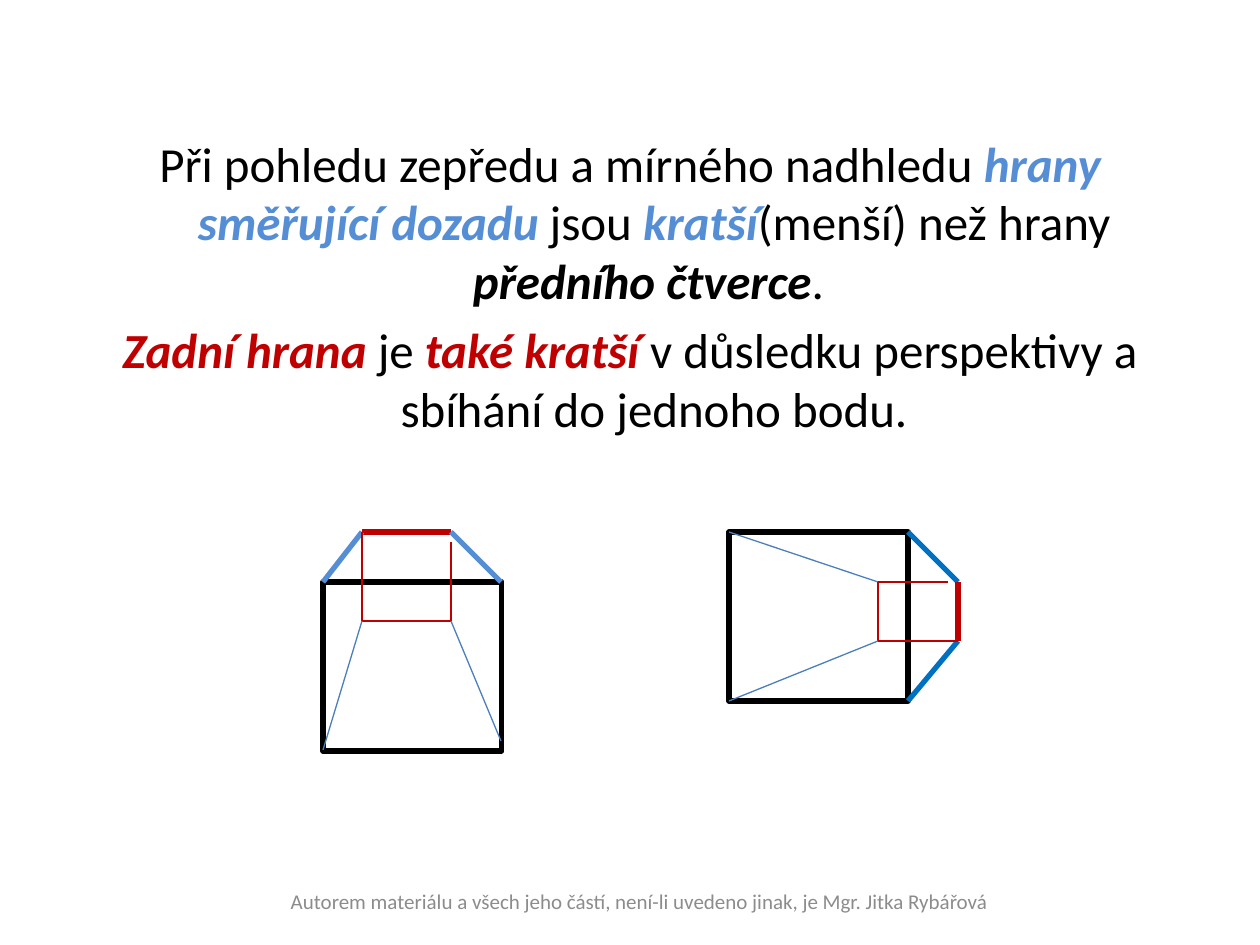
from pptx import Presentation
from pptx.dml.color import RGBColor
from pptx.enum.shapes import MSO_CONNECTOR, MSO_SHAPE
from pptx.enum.text import MSO_ANCHOR, MSO_AUTO_SIZE, PP_ALIGN
from pptx.oxml.ns import qn
from pptx.util import Pt
from lxml import etree

STRAIGHT = MSO_CONNECTOR.STRAIGHT
RECTANGLE = MSO_SHAPE.RECTANGLE
MIDDLE = MSO_ANCHOR.MIDDLE
NO_AUTOFIT = MSO_AUTO_SIZE.NONE
CENTER = PP_ALIGN.CENTER

EMU_PER_PX = 914400 / 126
THICK, MEDIUM, THIN = 3, 1, 0.75
HANGING = 48
COLORS = {
    "black": "000000",
    "red": "C00000",
    "light_blue": "558ED5",
    "blue": "0070C0",
    "thin_blue": "4B7EBC",
    "gray": "8C8C8C",
}

STATEMENTS = [
    [
        ("Při pohledu zepředu a mírného nadhledu ", "black", False),
        ("hrany směřující dozadu ", "light_blue", True),
        ("jsou ", "black", False),
        ("kratší", "light_blue", True),
        ("(menší) než hrany ", "black", False),
        ("předního čtverce", "black", True),
        (". ", "black", False),
    ],
    [
        ("Zadní hrana ", "red", True),
        ("je ", "black", False),
        ("také kratší ", "red", True),
        ("v důsledku perspektivy a sbíhání do jednoho bodu.", "black", False),
    ],
]
FOOTER = "Autorem materiálu a všech jeho částí, není-li uvedeno jinak, je Mgr. Jitka Rybářová"

TOP_VIEW_FRONT = (323, 582, 179, 169)
TOP_VIEW_EDGES = [
    ((362, 532), (451, 532), "red", THICK),
    ((501, 582), (451, 532), "light_blue", THICK),
    ((323, 582), (362, 532), "light_blue", THICK),
    ((362, 532), (362, 621), "red", THIN),
    ((362, 621), (451, 621), "red", THIN),
    ((451, 621), (451, 542), "red", THIN),
    ((451, 621), (501, 741), "thin_blue", THIN),
    ((362, 621), (323, 750), "thin_blue", THIN),
]
SIDE_VIEW_FRONT = (729, 532, 179, 169)
SIDE_VIEW_EDGES = [
    ((908, 532), (958, 582), "blue", THICK),
    ((958, 582), (958, 641), "red", THICK),
    ((958, 641), (908, 701), "blue", THICK),
    ((729, 532), (878, 582), "thin_blue", THIN),
    ((878, 582), (948, 582), "red", THIN),
    ((878, 582), (878, 641), "red", MEDIUM),
    ((878, 641), (958, 641), "red", THIN),
    ((878, 641), (729, 701), "thin_blue", THIN),
]


def px(length):
    """Turn pixels into EMU."""
    return round(length * EMU_PER_PX)


def color(name):
    """Look up a named colour."""
    return RGBColor.from_string(COLORS[name])


def add_text(paragraph, text, *, size, fill, emphasis=False):
    """Append one formatted run to a paragraph."""
    run = paragraph.add_run()
    run.text = text
    run.font.name = "Calibri"
    run.font.size = Pt(size)
    run.font.bold = run.font.italic = emphasis
    run.font.color.rgb = color(fill)


def fill_body(body):
    """Write the centred statements with a hanging indent and no bullets."""
    body.left, body.top, body.width, body.height = map(px, (63, 96, 1134, 714))
    frame = body.text_frame
    frame.auto_size = NO_AUTOFIT
    frame.margin_top = px(37)
    for index, statement in enumerate(STATEMENTS):
        paragraph = frame.add_paragraph() if index else frame.paragraphs[0]
        paragraph.alignment = CENTER
        paragraph.space_before = Pt(5.6 if index else 0)
        properties = paragraph._p.get_or_add_pPr()
        properties.set("marL", str(px(HANGING)))
        properties.set("indent", str(-px(HANGING)))
        etree.SubElement(properties, qn("a:buNone"))
        for text, fill, emphasis in statement:
            add_text(paragraph, text, size=28, fill=fill, emphasis=emphasis)


def add_footer(slide):
    """Place the centred authorship line."""
    footer = slide.shapes.add_textbox(*map(px, (213, 876, 853, 50)))
    frame = footer.text_frame
    frame.word_wrap = True
    frame.vertical_anchor = MIDDLE
    frame.paragraphs[0].alignment = CENTER
    add_text(frame.paragraphs[0], FOOTER, size=12, fill="gray")


def add_front(slide, box):
    """Draw the unfilled front square of a cube."""
    front = slide.shapes.add_shape(RECTANGLE, *map(px, box))
    front.shadow.inherit = False
    front.fill.background()
    front.line.color.rgb = color("black")
    front.line.width = Pt(THICK)


def add_edge(slide, start, end, stroke, width):
    """Draw one straight cube edge."""
    edge = slide.shapes.add_connector(STRAIGHT, *map(px, start + end))
    edge.line.color.rgb = color(stroke)
    edge.line.width = Pt(width)
    etree.SubElement(edge._element.spPr, qn("a:effectLst"))


def add_cube(slide, front, edges):
    """Draw a cube as a front square with its receding edges."""
    add_front(slide, front)
    for edge in edges:
        add_edge(slide, *edge)


def main():
    """Build the slide on cube perspective."""
    deck = Presentation()
    deck.slide_width, deck.slide_height = px(1260), px(945)
    slide = deck.slides.add_slide(deck.slide_layouts[1])
    title, body = slide.placeholders
    title.element.getparent().remove(title.element)
    fill_body(body)
    add_cube(slide, TOP_VIEW_FRONT, TOP_VIEW_EDGES)
    add_cube(slide, SIDE_VIEW_FRONT, SIDE_VIEW_EDGES)
    add_footer(slide)
    deck.save("out.pptx")


if __name__ == "__main__":
    main()
